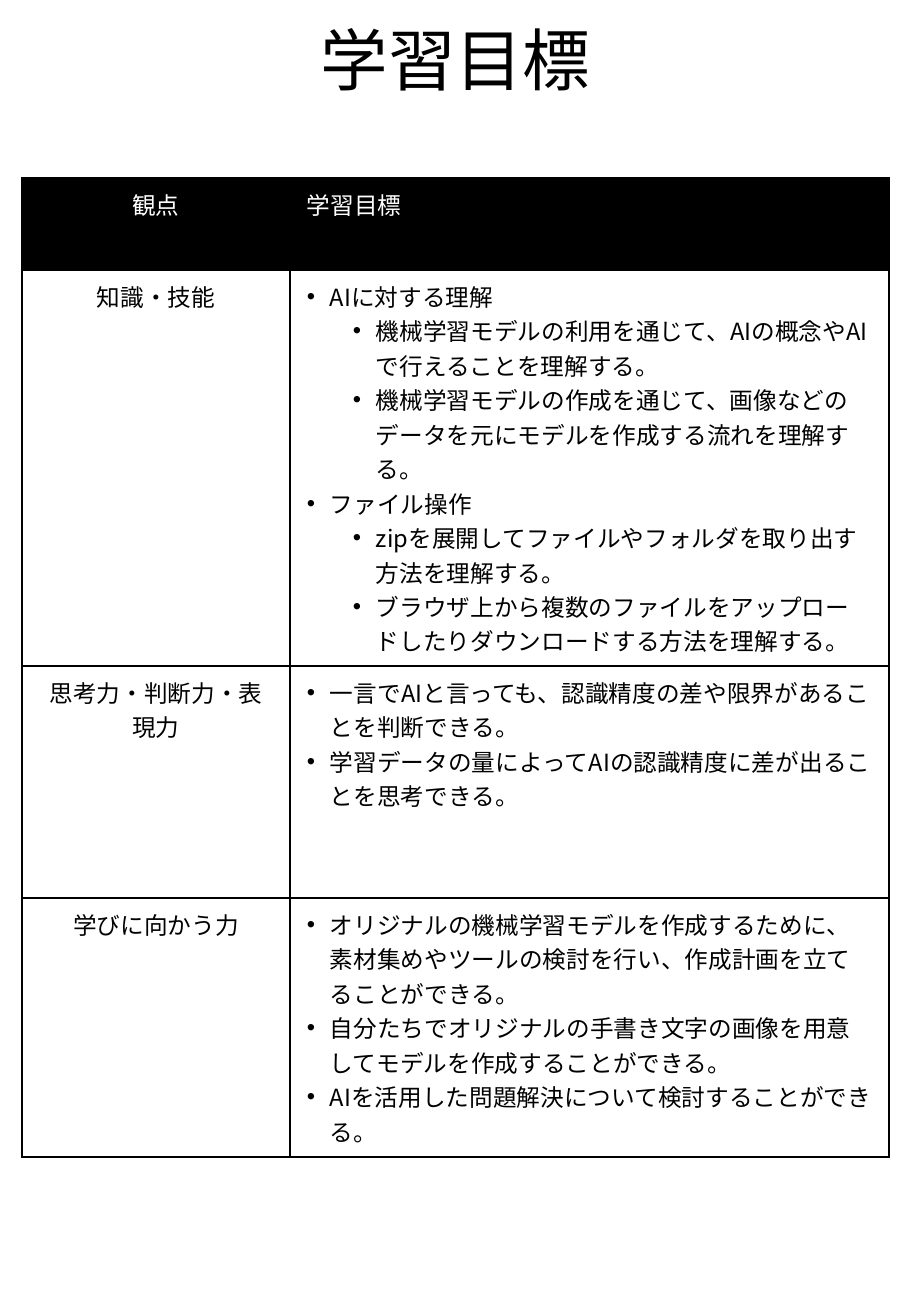
import pptx
import pptx.util
import pptx.dml.color
import pptx.enum.lang
import pptx.enum.text
import pptx.oxml
import pptx.oxml.ns
from dataclasses import dataclass

TITLE = "学習目標"
HEAD = ("観点", "学習目標")
# Each goal is (level, text).
ROWS = [
    ("知識・技能", [
        (0, "AIに対する理解"),
        (1, "機械学習モデルの利用を通じて、AIの概念やAIで行えることを理解する。"),
        (1, "機械学習モデルの作成を通じて、画像などのデータを元にモデルを作成する流れを理解する。"),
        (0, "ファイル操作"),
        (1, "zipを展開してファイルやフォルダを取り出す方法を理解する。"),
        (1, "ブラウザ上から複数のファイルをアップロードしたりダウンロードする方法を理解する。"),
    ]),
    ("思考力・判断力・表現力", [
        (0, "一言でAIと言っても、認識精度の差や限界があることを判断できる。"),
        (0, "学習データの量によってAIの認識精度に差が出ることを思考できる。"),
    ]),
    ("学びに向かう力", [
        (0, "オリジナルの機械学習モデルを作成するために、素材集めやツールの検討を行い、作成計画を立てることができる。"),
        (0, "自分たちでオリジナルの手書き文字の画像を用意してモデルを作成することができる。"),
        (0, "AIを活用した問題解決について検討することができる。"),
    ]),
]


@dataclass(frozen=True)
class Theme:
    font: str = "Noto Sans CJK JP"
    ink: str = "000000"
    paper: str = "FFFFFF"
    title: int = 40
    body: int = 14
    line: int = 1


THEME = Theme()
PAGE = (911, 1316)
TITLE_BOX = (68, 7, 775, 99)
TABLE_AT = (22, 178)
COLS = (268, 599)
HEIGHTS = (92, 396, 232, 259)
INSET = (17, 9)
HANG, STEP = 23, 46
ALIGN = pptx.enum.text.PP_ALIGN


def px(n):
    return pptx.util.Emu(round(n * 914400 / 121.5))


def rgb(code):
    return pptx.dml.color.RGBColor.from_string(code)


def add_xml(parent, body):
    space = pptx.oxml.ns.nsdecls("a")
    tag, rest = body[1:].split(" ", 1)
    parent.append(pptx.oxml.parse_xml(f"<{tag} {space} {rest}"))


def write(para, text, size, color, align):
    para.text = text
    para.alignment = align
    font = para.font
    font.size = pptx.util.Pt(size)
    font.name = THEME.font
    font.color.rgb = rgb(color)
    font.language_id = pptx.enum.lang.MSO_LANGUAGE_ID.JAPANESE
    props = para._p.pPr.find(pptx.oxml.ns.qn("a:defRPr"))
    add_xml(props, f'<a:ea typeface="{THEME.font}"/>')


def bullet(para, level):
    para.level = level
    props = para._p.get_or_add_pPr()
    props.set("marL", str(px(HANG + STEP * level)))
    props.set("indent", str(-px(HANG)))
    add_xml(props, '<a:buFont typeface="Arial"/>')
    add_xml(props, '<a:buChar char="•"/>')


def dress(cell, fill):
    """Set insets, borders and fill of a cell."""
    cell.margin_left = cell.margin_right = px(INSET[0])
    cell.margin_top = cell.margin_bottom = px(INSET[1])
    props = cell._tc.get_or_add_tcPr()
    width = pptx.util.Pt(THEME.line)
    for side in "LRTB":
        add_xml(props, f'<a:ln{side} w="{width}"><a:solidFill>'
                       f'<a:srgbClr val="{THEME.ink}"/></a:solidFill></a:ln{side}>')
    cell.fill.solid()
    cell.fill.fore_color.rgb = rgb(fill)


def add_title(slide):
    frame = slide.shapes.add_textbox(*map(px, TITLE_BOX)).text_frame
    frame.word_wrap = True
    frame.vertical_anchor = pptx.enum.text.MSO_ANCHOR.BOTTOM
    para = frame.paragraphs[0]
    para.line_spacing = 0.9
    write(para, TITLE, THEME.title, THEME.ink, ALIGN.CENTER)


def add_goals(slide):
    box = (*TABLE_AT, sum(COLS), sum(HEIGHTS))
    table = slide.shapes.add_table(len(HEIGHTS), len(COLS), *map(px, box)).table
    table.first_row = table.horz_banding = False
    for col, wide in zip(table.columns, COLS):
        col.width = px(wide)
    for row, high in zip(table.rows, HEIGHTS):
        row.height = px(high)

    for cell, text, align in zip(table.rows[0].cells, HEAD, (ALIGN.CENTER, ALIGN.LEFT)):
        dress(cell, THEME.ink)
        write(cell.text_frame.paragraphs[0], text, THEME.body, THEME.paper, align)

    for r, (view, goals) in enumerate(ROWS, 1):
        left, right = table.cell(r, 0), table.cell(r, 1)
        dress(left, THEME.paper)
        dress(right, THEME.paper)
        write(left.text_frame.paragraphs[0], view, THEME.body, THEME.ink, ALIGN.CENTER)
        frame = right.text_frame
        for i, (level, text) in enumerate(goals):
            para = frame.add_paragraph() if i else frame.paragraphs[0]
            bullet(para, level)
            write(para, text, THEME.body, THEME.ink, ALIGN.LEFT)


def main():
    deck = pptx.Presentation()
    deck.slide_width, deck.slide_height = map(px, PAGE)
    slide = deck.slides.add_slide(deck.slide_layouts[6])
    add_title(slide)
    add_goals(slide)
    deck.save("out.pptx")


if __name__ == "__main__":
    main()
